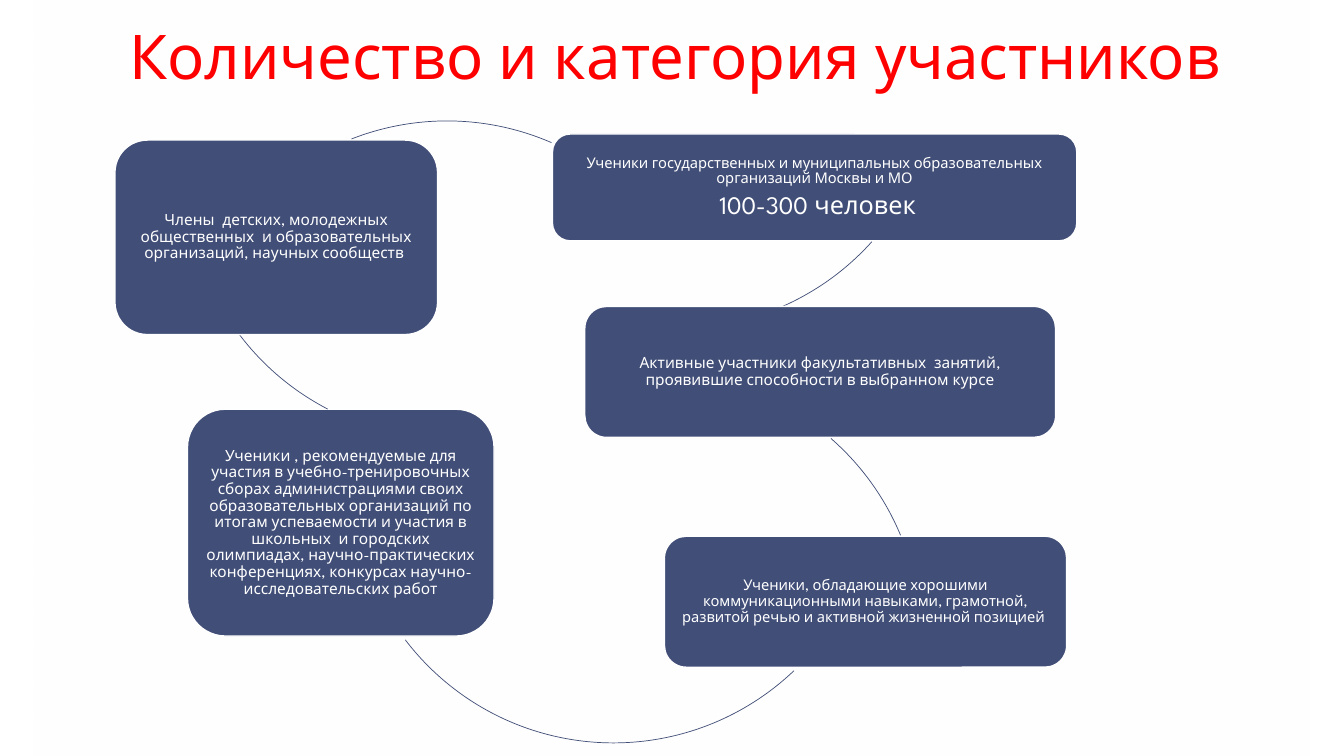
"""Build a slide showing a ring of five participant categories."""
from math import cos, radians, sin
from lxml.etree import SubElement
from pptx import Presentation
from pptx.dml.color import RGBColor
from pptx.enum.shapes import MSO_SHAPE
from pptx.enum.text import MSO_ANCHOR, PP_ALIGN
from pptx.oxml.ns import qn
from pptx.util import Inches, Pt

FONT, NAVY, WHITE, RED = "League Spartan", "414E77", "FFFFFF", "FF0000"


def color(value):
    """Turn a hex string into a colour."""
    return RGBColor.from_string(value)


def write(box, lines, hue, spacing, after, frame_format, align):
    """Fill a box with lines of (text, size)."""
    frame = box.text_frame
    for name, value in frame_format.items():
        setattr(frame, name, value)
    for index, (text, size) in enumerate(lines):
        para = frame.add_paragraph() if index else frame.paragraphs[0]
        para.alignment, para.line_spacing = align, spacing
        para.space_after = Pt(size * after)
        span = para.add_run()
        span.text = text
        span.font.name, span.font.size = FONT, Pt(size)
        span.font.color.rgb = color(hue)


deck = Presentation()
deck.slide_width, deck.slide_height = Inches(13.33), Inches(7.5)
column, row = deck.slide_width / 100, deck.slide_height / 100
page = deck.slides.add_slide(deck.slide_layouts[6])
page.background.fill.solid()
page.background.fill.fore_color.rgb = color(WHITE)

panel = page.shapes.add_shape(
    MSO_SHAPE.RECTANGLE, int(2.48 * column), 0, int(94.97 * column),
    deck.slide_height)
panel.shadow.inherit = False
panel.line.fill.background()
panel.fill.gradient()
panel.fill.gradient_angle = 230
for stop in panel.fill.gradient_stops:
    stop.color.rgb = color(WHITE)
last_color = panel._element.spPr.findall(".//" + qn("a:srgbClr"))[-1]
SubElement(last_color, qn("a:alpha"), val="55000")

title_format = {
    "word_wrap": True, "vertical_anchor": MSO_ANCHOR.BOTTOM,
    "margin_left": Inches(0.13), "margin_right": Inches(0.13),
    "margin_top": Inches(0.07), "margin_bottom": Inches(0.07),
}
card_format = {"word_wrap": True, "vertical_anchor": MSO_ANCHOR.MIDDLE}
for side in ("left", "right", "top", "bottom"):
    card_format[f"margin_{side}"] = Inches(0.05)

title = page.shapes.add_textbox(
    int(8.63 * column), int(2.8 * row), int(83.35 * column), int(10.27 * row))
write(title, [("Количество и категория участников", 44)], RED, 0.85, 0,
      title_format, PP_ALIGN.LEFT)

cards = [
    ((41.11, 17.73, 39.01, 14.13), [
        ("Ученики государственных и муниципальных образовательных "
         "организаций Москвы и МО", 10.5),
        (" 100-300 человек", 18)]),
    ((43.51, 40.53, 35.03, 17.33), [
        ("Активные участники факультативных  занятий, проявившие "
         "способности в выбранном курсе", 11)]),
    ((49.44, 70.93, 29.93, 17.33), [
        ("Ученики, обладающие хорошими коммуникационными навыками, "
         "грамотной, развитой речью и активной жизненной позицией ", 10.5)]),
    ((13.95, 54.13, 22.81, 30), [
        ("Ученики , рекомендуемые для участия в учебно-тренировочных сборах "
         "администрациями своих образовательных организаций по итогам "
         "успеваемости и участия в школьных  и городских олимпиадах, "
         "научно-практических конференциях, конкурсах "
         "научно-исследовательских работ", 11)]),
    ((8.55, 18.53, 24.01, 25.73), [
        ("Члены  детских, молодежных общественных  и образовательных "
         "организаций, научных сообществ ", 11)]),
]
arcs = [
    (30.91, -25.73, 41.9, 24.2),
    (29.56, 49.47, 311.1, 26.4),
    (26.18, 29.07, 46.4, 96.3),
    (13.88, -11.2, 117.4, 25.4),
    (13.8, 16, 248.6, 44.9),
]
radius = int(19.47 * column)

for ((left, top, width, height), lines), (x, y, angle, sweep) in zip(cards, arcs):
    card = page.shapes.add_shape(
        MSO_SHAPE.ROUNDED_RECTANGLE, int(left * column), int(top * row),
        int(width * column), int(height * row))
    card.shadow.inherit = False
    card.fill.solid()
    card.fill.fore_color.rgb = color(NAVY)
    card.line.color.rgb, card.line.width = color(WHITE), Pt(1)
    write(card, lines, WHITE, 0.9, 0.35, card_format, PP_ALIGN.CENTER)

    arc_left, arc_top = int(x * column), int(y * row)
    outline = page.shapes.build_freeform(arc_left, arc_top)
    outline.add_line_segments(
        [(arc_left + 2 * radius, arc_top + 2 * radius)], close=False)
    arc = outline.convert_to_shape()
    arc.shadow.inherit = False
    arc.fill.background()
    arc.line.color.rgb, arc.line.width = color(NAVY), Pt(0.5)

    segment = arc._element.spPr.find(".//" + qn("a:lnTo"))
    curve = segment.getparent()
    curve.remove(segment)
    start = curve.find(".//" + qn("a:pt"))
    start.set("x", str(int(radius * (1 + cos(radians(angle))))))
    start.set("y", str(int(radius * (1 + sin(radians(angle))))))
    SubElement(curve, qn("a:arcTo"), wR=str(radius), hR=str(radius),
               stAng=str(round(angle * 60000)), swAng=str(round(sweep * 60000)))

deck.save("out.pptx")
